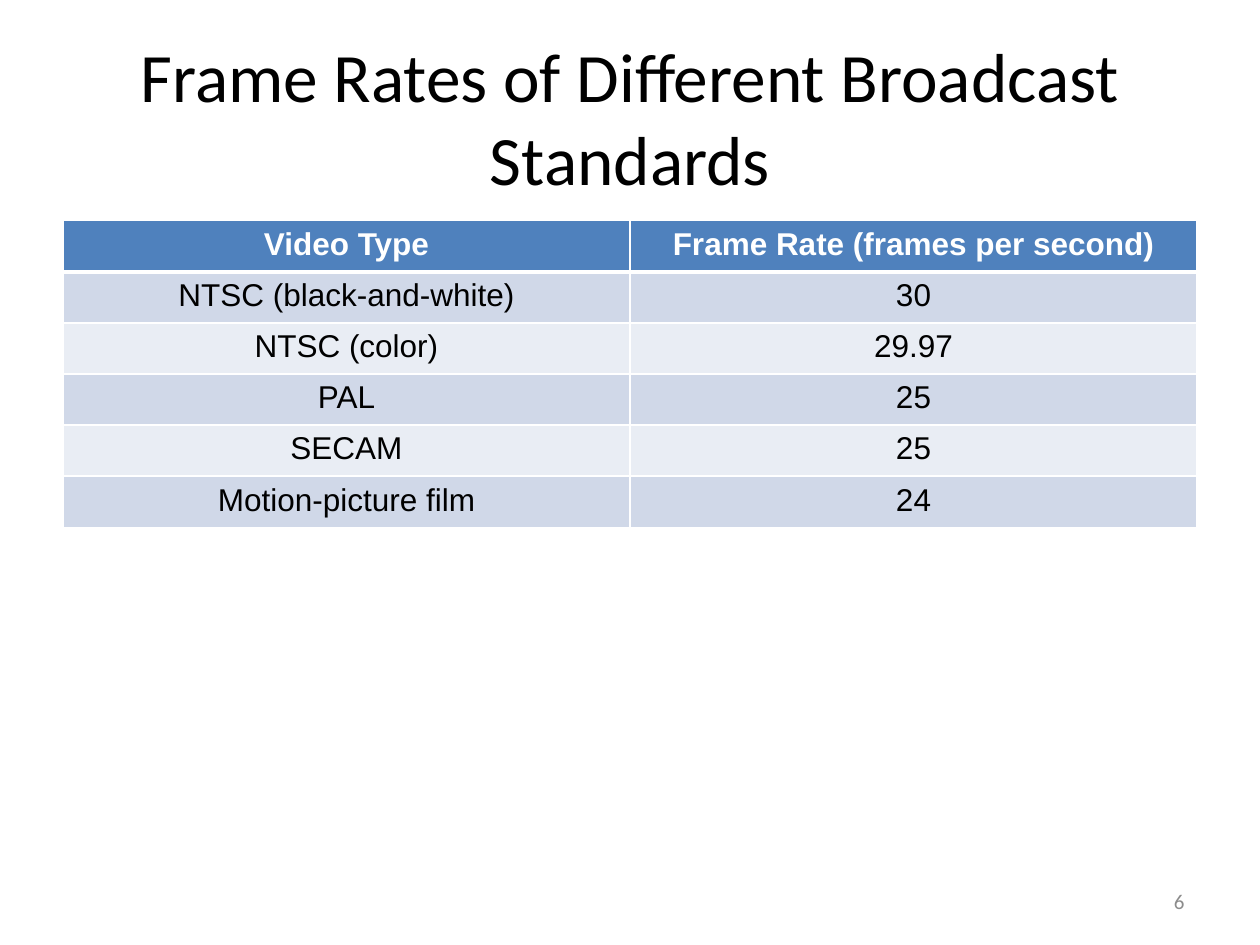
from lxml import etree
from pptx import Presentation
from pptx import util as u
from pptx.dml.color import RGBColor
from pptx.enum import text as t
from pptx.oxml.ns import qn

COLORS = {
    "black": "000000",
    "white": "FFFFFF",
    "header": "4F81BD",
    "odd_row": "D0D8E8",
    "even_row": "E9EDF4",
    "page_number": "8C8C8C",
}
FRAME_RATES = [
    ("Video Type", "Frame Rate (frames per second)"),
    ("NTSC (black-and-white)", "30"),
    ("NTSC (color)", "29.97"),
    ("PAL", "25"),
    ("SECAM", "25"),
    ("Motion-picture film", "24"),
]
MARGIN = u.Cm(1.27)
CONTENT_WIDTH = u.Cm(22.86)


def write(frame, words, font="Calibri", size=18, color="black", bold=False,
          align=t.PP_ALIGN.CENTER):
    paragraph = frame.paragraphs[0]
    paragraph.alignment = align
    run = paragraph.add_run()
    run.text = words
    run.font.name = font
    run.font.size = u.Pt(size)
    run.font.bold = bold
    run.font.color.rgb = RGBColor.from_string(COLORS[color])


def add_title(slide, words):
    title = slide.shapes.title
    title.left, title.top = MARGIN, u.Cm(0.76)
    title.width, title.height = CONTENT_WIDTH, u.Cm(3.18)
    frame = title.text_frame
    frame.word_wrap = True
    frame.auto_size = t.MSO_AUTO_SIZE.NONE
    frame.vertical_anchor = t.MSO_ANCHOR.MIDDLE
    write(frame, words, size=39.6)


def set_borders(cell, widths):
    """Draw white cell borders; widths maps a side (L, R, T, B) to points."""
    properties = cell._tc.get_or_add_tcPr()
    for position, (side, width) in enumerate(widths.items()):
        line = etree.Element(qn(f"a:ln{side}"), w=str(u.Pt(width)))
        fill = etree.SubElement(line, qn("a:solidFill"))
        etree.SubElement(fill, qn("a:srgbClr"), val=COLORS["white"])
        properties.insert(position, line)


def add_rate_table(slide, rows):
    columns = len(rows[0])
    table = slide.shapes.add_table(len(rows), columns, MARGIN, u.Cm(4.45),
                                   CONTENT_WIDTH, u.Cm(6.18)).table
    for row_index, row in enumerate(rows):
        is_header = row_index == 0
        band = "header" if is_header else "odd_row" if row_index % 2 else "even_row"
        top = 3 if row_index == 1 else 1
        bottom = 3 if is_header else 1
        for column_index, words in enumerate(row):
            cell = table.cell(row_index, column_index)
            cell.fill.solid()
            cell.fill.fore_color.rgb = RGBColor.from_string(COLORS[band])
            set_borders(cell, {"L": 1, "R": 1, "T": top, "B": bottom})
            write(cell.text_frame, words, font="Arial", bold=is_header,
                  color="white" if is_header else "black")


def add_page_number(slide, number):
    box = slide.shapes.add_textbox(u.Cm(18.2), u.Cm(17.66), u.Cm(5.93), u.Cm(1.01))
    frame = box.text_frame
    frame.word_wrap = True
    frame.vertical_anchor = t.MSO_ANCHOR.MIDDLE
    write(frame, number, size=12, color="page_number", align=t.PP_ALIGN.RIGHT)


def main():
    deck = Presentation()
    deck.slide_width, deck.slide_height = u.Cm(25.4), u.Cm(19.05)
    slide = deck.slides.add_slide(deck.slide_layouts.get_by_name("Title Only"))
    add_title(slide, "Frame Rates of Different Broadcast Standards")
    add_rate_table(slide, FRAME_RATES)
    add_page_number(slide, "6")
    deck.save("out.pptx")


if __name__ == "__main__":
    main()
